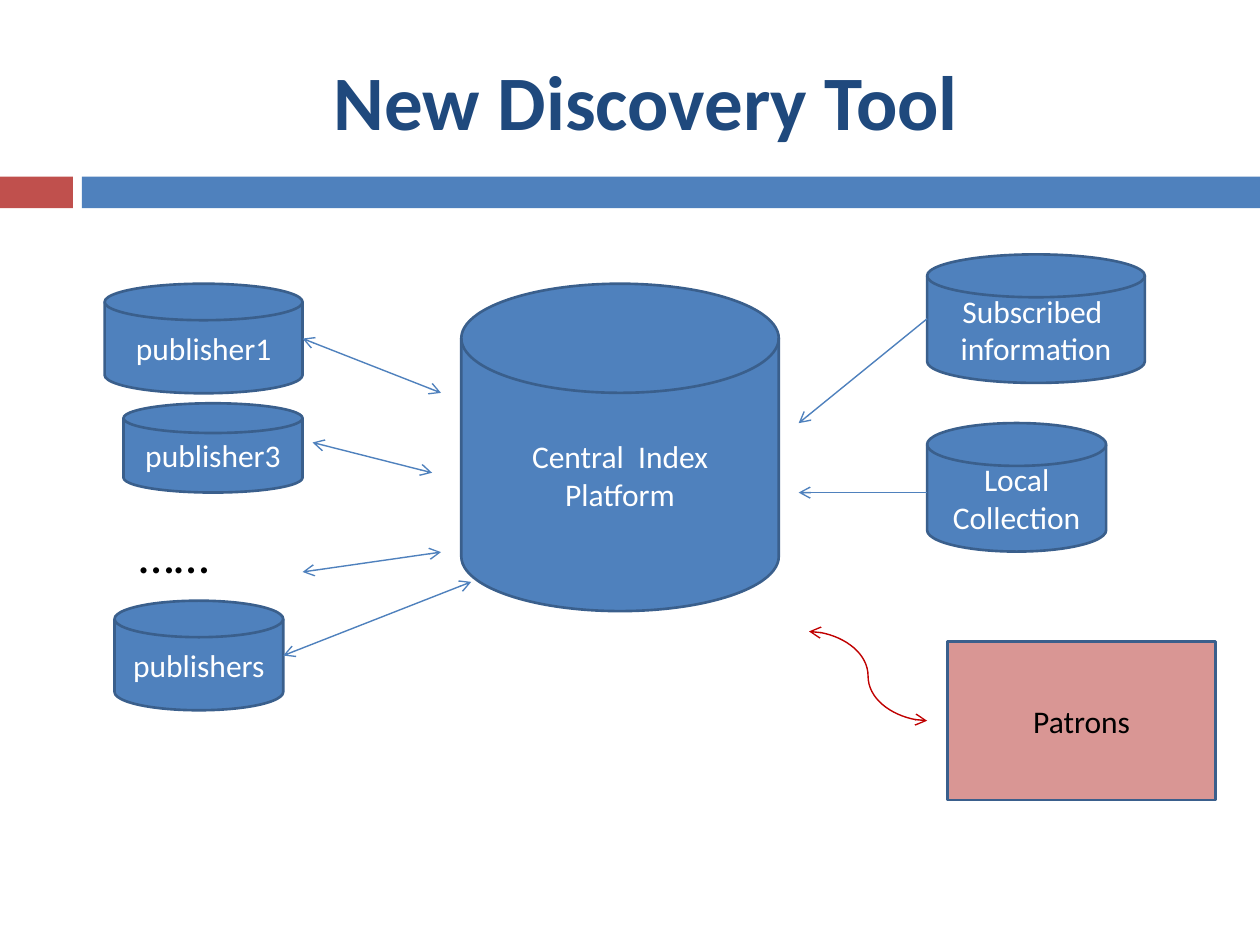
"""Build the New Discovery Tool slide, a diagram of sources feeding a central index."""
import pptx
import pptx.dml.color
import pptx.enum.shapes
import pptx.enum.text
import pptx.oxml.ns
import pptx.util
from lxml import etree
from pptx.util import Cm

RGBColor = pptx.dml.color.RGBColor
BLUE = RGBColor(0x4F, 0x81, 0xBD)
OUTLINE_BLUE = RGBColor(0x3A, 0x5F, 0x8C)
TITLE_BLUE = RGBColor(0x1F, 0x49, 0x7D)
RED = RGBColor(0xC0, 0x50, 0x4D)
DARK_RED = RGBColor(0xC0, 0x00, 0x00)
PINK = RGBColor(0xD9, 0x96, 0x94)
WHITE = RGBColor(0xFF, 0xFF, 0xFF)
BLACK = RGBColor(0x00, 0x00, 0x00)

SHAPE = pptx.enum.shapes.MSO_SHAPE
CONNECTOR = pptx.enum.shapes.MSO_CONNECTOR
ALIGN = pptx.enum.text.PP_ALIGN
ANCHOR = pptx.enum.text.MSO_ANCHOR


def write(text_frame, text, size=18, color=WHITE, bold=False, align=ALIGN.CENTER, anchor=ANCHOR.MIDDLE):
    text_frame.text = text
    text_frame.word_wrap = True
    text_frame.auto_size = pptx.enum.text.MSO_AUTO_SIZE.NONE
    text_frame.vertical_anchor = anchor
    for paragraph in text_frame.paragraphs:
        paragraph.alignment = align
        for run in paragraph.runs:
            run.font.name = "Calibri"
            run.font.size = pptx.util.Pt(size)
            run.font.bold = bold
            run.font.color.rgb = color


def add_arrow(shapes, kind, start, end, color, ends):
    connector = shapes.add_connector(kind, *map(Cm, start + end))
    connector.line.color.rgb = color
    connector.line.width = pptx.util.Pt(0.79)
    line = connector.line._get_or_add_ln()
    for name in ends:
        etree.SubElement(line, pptx.oxml.ns.qn(f"a:{name}"), type="arrow")
    etree.SubElement(connector._element.spPr, pptx.oxml.ns.qn("a:effectLst"))
    return connector


presentation = pptx.Presentation()
presentation.slide_width = Cm(25.4)
presentation.slide_height = Cm(19.05)
slide = presentation.slides.add_slide(presentation.slide_layouts[5])
shapes = slide.shapes

title = shapes.title
title.left, title.top, title.width, title.height = map(Cm, (1.7, 0.64, 22.66, 2.74))
write(title.text_frame, "New Discovery Tool", size=44, color=TITLE_BLUE, bold=True)

for left, width, color in [(0, 1.47, RED), (1.65, 23.75, BLUE)]:
    bar = shapes.add_shape(SHAPE.RECTANGLE, Cm(left), Cm(3.56), Cm(width), Cm(0.64))
    bar.shadow.inherit = False
    bar.fill.solid()
    bar.fill.fore_color.rgb = color
    bar.line.fill.background()

DISK = SHAPE.FLOWCHART_MAGNETIC_DISK
nodes = {}
for text, kind, box, fill, color in [
    ("Central  Index\nPlatform", DISK, (9.3, 5.72, 6.4, 6.6), BLUE, WHITE),
    ("Patrons", SHAPE.RECTANGLE, (19.1, 12.93, 5.41, 3.2), PINK, BLACK),
    ("Local Collection", DISK, (18.69, 8.53, 3.61, 2.59), BLUE, WHITE),
    ("publisher1", DISK, (2.11, 5.72, 3.99, 2.21), BLUE, WHITE),
    ("publisher3", DISK, (2.49, 8.13, 3.61, 1.8), BLUE, WHITE),
    ("publishers", DISK, (2.31, 12.11, 3.4, 2.21), BLUE, WHITE),
    ("Subscribed  information", DISK, (18.69, 5.13, 4.39, 2.59), BLUE, WHITE),
]:
    node = shapes.add_shape(kind, *map(Cm, box))
    node.shadow.inherit = False
    node.fill.solid()
    node.fill.fore_color.rgb = fill
    node.line.color.rgb = OUTLINE_BLUE
    node.line.width = pptx.util.Pt(1.5)
    write(node.text_frame, text, color=color)
    nodes[text] = node

more_publishers = shapes.add_textbox(Cm(2.8), Cm(10.54), Cm(3), Cm(1.25)).text_frame
more_publishers.margin_left = more_publishers.margin_top = 0
write(more_publishers, "……", size=29, color=BLACK, align=ALIGN.LEFT, anchor=ANCHOR.TOP)

BOTH_ENDS = ("headEnd", "tailEnd")
END_ONLY = ("tailEnd",)
LEFT, RIGHT = 1, 3
for start, end, ends, source, side in [
    ((18.69, 9.93), (16.1, 9.93), END_ONLY, None, None),
    ((8.71, 9.53), (6.3, 8.92), BOTH_ENDS, None, None),
    ((18.69, 6.43), (16.1, 8.53), END_ONLY, "Subscribed  information", LEFT),
    ((6.1, 6.83), (8.89, 7.92), BOTH_ENDS, "publisher1", RIGHT),
    ((6.1, 11.53), (8.89, 11.13), BOTH_ENDS, None, None),
    ((5.69, 13.23), (9.5, 11.73), BOTH_ENDS, "publishers", RIGHT),
]:
    arrow = add_arrow(shapes, CONNECTOR.STRAIGHT, start, end, BLUE, ends)
    if source:
        arrow.begin_connect(nodes[source], side)
        arrow._element.nvCxnSpPr.cNvCxnSpPr.stCxn.idx = side + 1

add_arrow(shapes, CONNECTOR.CURVE, (16.31, 12.73), (18.69, 14.53), DARK_RED, BOTH_ENDS)

presentation.save("out.pptx")
